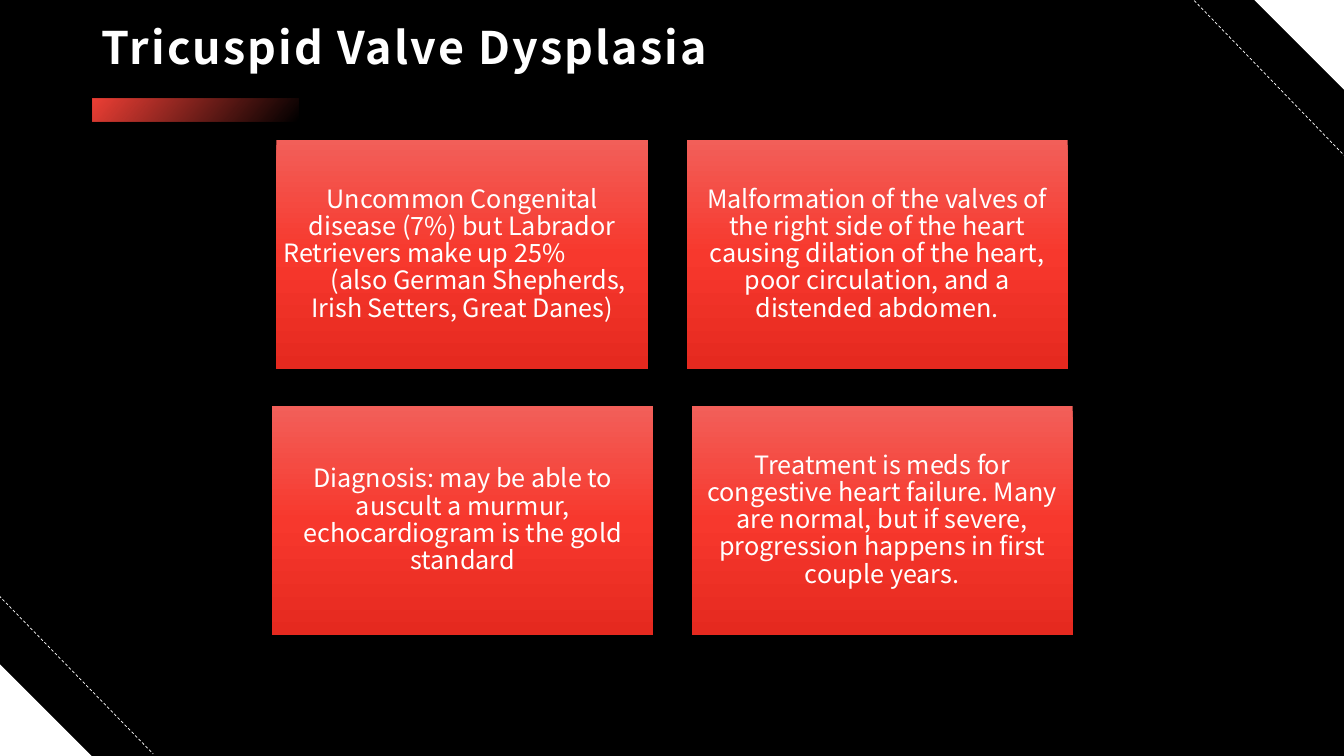
from lxml import etree
from pptx import Presentation
from pptx.dml.color import RGBColor
from pptx.enum.dml import MSO_LINE
from pptx.enum.shapes import MSO_CONNECTOR, MSO_SHAPE
from pptx.enum.text import MSO_ANCHOR, MSO_AUTO_SIZE, PP_ALIGN
from pptx.oxml.ns import qn
from pptx.util import Inches, Pt

RECT, CORNER = MSO_SHAPE.RECTANGLE, MSO_SHAPE.RIGHT_TRIANGLE
STRAIGHT, DASH = MSO_CONNECTOR.STRAIGHT, MSO_LINE.DASH
LEFT, CENTER = PP_ALIGN.LEFT, PP_ALIGN.CENTER
MIDDLE, NO_FIT = MSO_ANCHOR.MIDDLE, MSO_AUTO_SIZE.NONE

WHITE, BLACK = "FFFFFF", "000000"
HEAD_FONT, BODY_FONT = "Noto Sans CJK TC", "Noto Sans CJK JP"
# Gradient stops: position in percent, colour, opacity in percent
CARD_FILL = [(0, "F25F59", 100), (50, "F7382D", 100), (100, "E5291F", 100)]
BAR_FILL = [(0, "EE4036", 100), (99, "EE4036", 0)]

# Cards: left, top, width, then paragraphs as (text, alignment, left indent)
CARDS = [
    (2.74, 1.39, 3.69, [
        ("Uncommon Congenital disease (7%) but Labrador", CENTER, 0),
        ("Retrievers make up 25%", LEFT, 0),
        ("(also German Shepherds,", CENTER, 0.32),
        ("Irish Setters, Great Danes)", CENTER, 0)]),
    (6.81, 1.39, 3.78, [
        ("Malformation of the valves of the right side of the heart causing "
         "dilation of the heart, poor circulation, and a distended abdomen.",
         CENTER, 0)]),
    (2.70, 4.03, 3.78, [
        ("Diagnosis: may be able to auscult a murmur, echocardiogram is the "
         "gold standard", CENTER, 0)]),
    (6.86, 4.03, 3.78, [
        ("Treatment is meds for congestive heart failure. Many are normal, "
         "but if severe, progression happens in first couple years.",
         CENTER, 0)]),
]


def color(code):
    return RGBColor.from_string(code)


def add_shape(slide, kind, left, top, width, height, fill=WHITE):
    shape = slide.shapes.add_shape(
        kind, Inches(left), Inches(top), Inches(width), Inches(height))
    shape.shadow.inherit = False
    shape.fill.solid()
    shape.fill.fore_color.rgb = color(fill)
    shape.line.fill.background()
    return shape


def set_grad(shape, stops, angle):
    """Swap the solid fill for a linear gradient."""
    grad = etree.Element(qn("a:gradFill"), rotWithShape="1")
    group = etree.SubElement(grad, qn("a:gsLst"))
    for place, code, alpha in stops:
        stop = etree.SubElement(group, qn("a:gs"), pos=str(place * 1000))
        tint = etree.SubElement(stop, qn("a:srgbClr"), val=code)
        if alpha < 100:
            etree.SubElement(tint, qn("a:alpha"), val=str(alpha * 1000))
    etree.SubElement(grad, qn("a:lin"), ang=str(angle * 60000), scaled="0")
    props = shape.element.spPr
    props.replace(props.find(qn("a:solidFill")), grad)


def add_dash(slide, x1, y1, x2, y2):
    line = slide.shapes.add_connector(
        STRAIGHT, Inches(x1), Inches(y1), Inches(x2), Inches(y2))
    line.line.color.rgb = color(WHITE)
    line.line.width = Pt(0.5)
    line.line.dash_style = DASH
    etree.SubElement(line.element.spPr, qn("a:effectLst"))


def add_run(para, text, size, font, bold=False):
    para.line_spacing = 0.9
    run = para.add_run()
    run.text = text
    run.font.size = Pt(size)
    run.font.name = font
    run.font.bold = bold
    run.font.color.rgb = color(WHITE)
    return run


def set_title(slide, text):
    title = slide.shapes.title
    title.left, title.top = Inches(0.91), Inches(0.18)
    title.width, title.height = Inches(11.51), Inches(0.64)
    frame = title.text_frame
    frame.auto_size = NO_FIT
    frame.vertical_anchor = MIDDLE
    para = frame.paragraphs[0]
    para.alignment = LEFT
    run = add_run(para, text, 32, HEAD_FONT, True)
    run.font._element.set("spc", "150")


def add_card(slide, left, top, width, paras):
    card = add_shape(slide, RECT, left, top, width, 2.27)
    set_grad(card, CARD_FILL, 90)
    frame = card.text_frame
    frame.word_wrap = True
    frame.vertical_anchor = MIDDLE
    frame.margin_left = frame.margin_right = Inches(0.07)
    frame.margin_top = frame.margin_bottom = Inches(0.07)
    for index, (text, align, indent) in enumerate(paras):
        para = frame.add_paragraph() if index else frame.paragraphs[0]
        para.alignment = align
        if indent:
            para._p.get_or_add_pPr().set("marL", str(Inches(indent)))
        add_run(para, text, 18, BODY_FONT)


def main():
    deck = Presentation()
    deck.slide_width, deck.slide_height = Inches(13.33), Inches(7.5)
    slide = deck.slides.add_slide(deck.slide_layouts[5])
    slide.background.fill.solid()
    slide.background.fill.fore_color.rgb = color(BLACK)

    # Corner decoration
    add_shape(slide, CORNER, 0, 6.59, 0.91, 0.91)
    add_shape(slide, CORNER, 12.43, -0.01, 0.91, 0.91).rotation = 180
    add_dash(slide, -0.01, 5.91, 1.52, 7.48)
    add_dash(slide, 11.81, -0.03, 13.34, 1.55)

    # Title and its fading bar
    set_title(slide, "Tricuspid Valve Dysplasia")
    bar = add_shape(slide, RECT, 0.92, 0.98, 2.04, 0.23)
    set_grad(bar, BAR_FILL, 40)

    # Fact cards
    for card in CARDS:
        add_card(slide, *card)

    deck.save("out.pptx")


if __name__ == "__main__":
    main()
